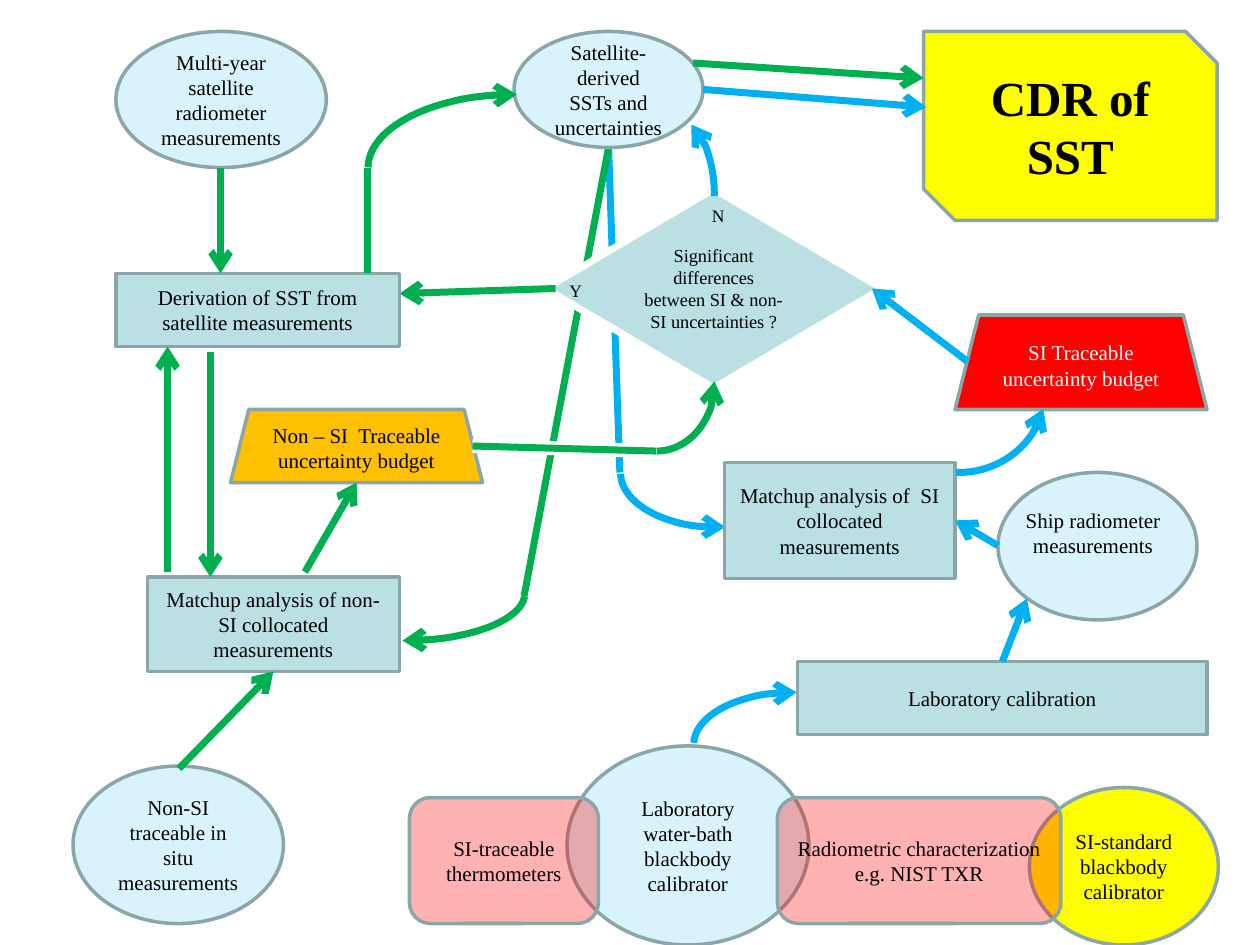
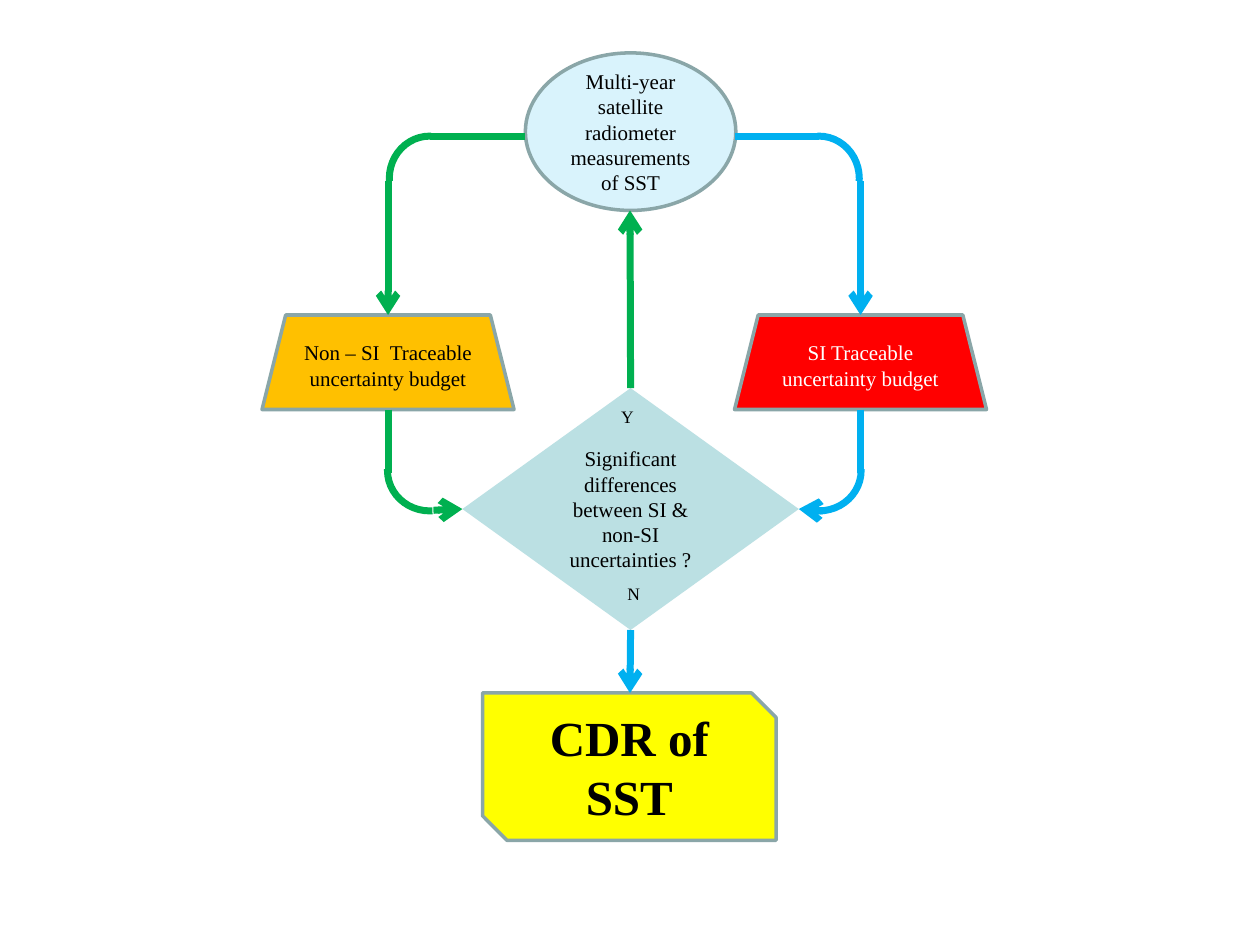
from typing import NamedTuple

from lxml import etree
from pptx import Presentation
from pptx.dml.color import RGBColor
from pptx.enum.shapes import MSO_CONNECTOR, MSO_SHAPE
from pptx.enum.text import MSO_ANCHOR, PP_ALIGN
from pptx.oxml.ns import qn
from pptx.util import Inches, Pt

ARC, DIAMOND, ELLIPSE = MSO_SHAPE.ARC, MSO_SHAPE.DIAMOND, MSO_SHAPE.OVAL
RECT, ROUNDED = MSO_SHAPE.RECTANGLE, MSO_SHAPE.ROUNDED_RECTANGLE
SNIPPED, TRAPEZOID = MSO_SHAPE.SNIP_2_DIAG_RECTANGLE, MSO_SHAPE.TRAPEZOID
STRAIGHT = MSO_CONNECTOR.STRAIGHT
CENTER, MIDDLE = PP_ALIGN.CENTER, MSO_ANCHOR.MIDDLE
TOP, LEFT, BOTTOM, RIGHT = range(4)

FONT = "Times New Roman"
BLACK, WHITE, OUTLINE = "000000", "FFFFFF", "8AA6A8"
SI_BLUE, NON_SI_GREEN = "00B0F0", "00B050"
PROCESS, RESULT, SI_RED, NON_SI_AMBER = "BBE0E3", "FFFF00", "FF0000", "FFC000"

QUESTION = "Significant differences between SI & non-SI uncertainties ?"
SI_BUDGET = "SI Traceable uncertainty budget"
NON_SI_BUDGET = "Non – SI  Traceable uncertainty budget"
GOAL = "CDR of SST"


class Joint(NamedTuple):
    """A connection site on a shape."""
    shape: object
    site: int


def rgb(color):
    return RGBColor.from_string(color)


def write(frame, text, size, color=BLACK, bold=False):
    frame.text = text
    for paragraph in frame.paragraphs:
        paragraph.alignment = CENTER
        for run in paragraph.runs:
            run.font.name = FONT
            run.font.size = Pt(size)
            run.font.bold = bold
            run.font.color.rgb = rgb(color)


def set_line(line, color, width, head=None):
    """Style a line; head is headEnd, tailEnd or None."""
    line.color.rgb = rgb(color)
    line.width = Pt(width)
    if head:
        etree.SubElement(line._get_or_add_ln(), qn("a:" + head), type="arrow")


class Region:
    """Draws parts at inches measured from the region's corner."""

    def __init__(self, slide, left, top):
        self.shapes = slide.shapes
        self.left, self.top = left, top

    def place(self, x, y):
        return Inches(self.left + x), Inches(self.top + y)

    def add(self, kind, box, alpha=None, fill=None):
        x, y, width, height = box
        shape = self.shapes.add_shape(kind, *self.place(x, y), Inches(width), Inches(height))
        shape.shadow.inherit = False
        if fill is None:
            shape.fill.background()
            return shape
        shape.fill.solid()
        shape.fill.fore_color.rgb = rgb(fill)
        if alpha is not None:
            color = shape.fill._xPr.find(qn("a:solidFill"))[0]
            etree.SubElement(color, qn("a:alpha"), val=str(alpha * 1000))
        return shape

    def node(self, kind, box, text, fill, alpha=None, size=12, color=BLACK, bold=False,
             outline=OUTLINE, width=2):
        shape = self.add(kind, box, alpha, fill)
        if outline:
            set_line(shape.line, outline, width)
        else:
            shape.line.fill.background()
        shape.text_frame.word_wrap = True
        shape.text_frame.vertical_anchor = MIDDLE
        write(shape.text_frame, text, size, color, bold)
        return shape

    def data(self, box, text):
        return self.node(ELLIPSE, box, text, SI_BLUE, alpha=15)

    def process(self, box, text):
        return self.node(RECT, box, text, PROCESS)

    def si_budget(self, box):
        return self.node(TRAPEZOID, box, SI_BUDGET, SI_RED, color=WHITE)

    def non_si_budget(self, box):
        return self.node(TRAPEZOID, box, NON_SI_BUDGET, NON_SI_AMBER)

    def goal(self, box):
        return self.node(SNIPPED, box, GOAL, RESULT, size=28, bold=True)

    def label(self, x, y, text, size=10, width=0.3, height=0.27, wrap=False):
        box = self.shapes.add_textbox(*self.place(x, y), Inches(width), Inches(height))
        box.text_frame.word_wrap = wrap
        write(box.text_frame, text, size)

    def line(self, start, end, color, arrow=True, width=4):
        """Draw a straight line between points or joints."""
        points = [(0, 0) if isinstance(p, Joint) else self.place(*p) for p in (start, end)]
        connector = self.shapes.add_connector(STRAIGHT, *points[0], *points[1])
        if isinstance(start, Joint):
            connector.begin_connect(start.shape, start.site)
        if isinstance(end, Joint):
            connector.end_connect(end.shape, end.site)
        set_line(connector.line, color, width, "tailEnd" if arrow else None)
        etree.SubElement(connector._element.spPr, qn("a:effectLst"))

    def arc(self, box, color, rotation, flip, start, end, arrow=True):
        """Draw an arc; start and end are degrees, flip holds h and/or v."""
        shape = self.add(ARC, box)
        for index, angle in enumerate((start, end)):
            shape.adjustments[index] = angle * 0.6
        shape.rotation = rotation
        for axis in flip:
            shape._element.spPr.xfrm.set("flip" + axis.upper(), "1")
        set_line(shape.line, color, 4, "headEnd" if arrow else None)


def satellite_and_decision(slide, left, top):
    area = Region(slide, left, top)
    below_satellite = (0.75, 0.92)
    area.line(below_satellite, (0.84, 3.5), SI_BLUE, arrow=False)
    area.arc((1.17, 2.76, 0.85, 1.5), SI_BLUE, 270.8, "hv", 348.3, 89.1)
    area.line(below_satellite, (0.08, 4.48), NON_SI_GREEN, arrow=False)
    area.arc((-1.25, 3.5, 0.75, 1.92), NON_SI_GREEN, 270, "h", 358.4, 88.7)
    area.node(DIAMOND, (0.25, 1.25, 2.67, 1.58), QUESTION, PROCESS, size=10.5,
              outline=WHITE, width=4)
    area.data((0, 0, 1.5, 0.92), "Satellite-derived SSTs and uncertainties")
    area.goal((3.25, 0, 2.33, 1.5))
    area.label(0.34, 1.92, "Y")
    area.label(1.47, 1.33, "N")
    area.line((1.5, 0.46), (3.27, 0.6), SI_BLUE)
    area.line((1.42, 0.25), (3.25, 0.37), NON_SI_GREEN)
    area.arc((0.63, 0.96, 1.25, 0.67), SI_BLUE, 90, "hv", 15.3, 91.9)
    area.line((0.33, 2.04), (-0.91, 2.08), NON_SI_GREEN)


def non_si_chain(slide, left, top):
    area = Region(slide, left, top)
    area.data((0.34, 0, 1.67, 1.08), "Multi-year satellite radiometer measurements")
    area.process((0.34, 1.92, 2.25, 0.58), "Derivation of SST from satellite measurements")
    budget = area.non_si_budget((1.25, 3, 2, 0.58))
    matchup = area.process((0.59, 4.33, 2, 0.75),
                           "Matchup analysis of non-SI collocated measurements")
    area.data((0, 5.83, 1.67, 1.25), "Non-SI traceable in situ measurements")

    area.line((1.17, 1.08), (1.17, 1.92), NON_SI_GREEN)
    area.line((0.75, 4.29), (0.75, 2.5), NON_SI_GREEN)
    area.line((1.09, 2.54), (1.09, 4.33), NON_SI_GREEN)
    area.line((0.84, 5.85), Joint(matchup, BOTTOM), NON_SI_GREEN)
    area.line((1.84, 4.29), Joint(budget, BOTTOM), NON_SI_GREEN)
    area.line((2.34, 1.92), (2.34, 1.08), NON_SI_GREEN, arrow=False)
    area.arc((2.92, -0.08, 1.17, 2.33), NON_SI_GREEN, 270, "v", 358.4, 89.7)
    area.arc((4.17, 2.25, 0.92, 1.08), NON_SI_GREEN, 180, "hv", 358.4, 89.7)
    for color, width in ((WHITE, 8), (NON_SI_GREEN, 4)):
        area.line((3.17, 3.29), (4.63, 3.33), color, arrow=False, width=width)


def si_chain(slide, left, top):
    area = Region(slide, left, top)
    area.si_budget((1.83, 0, 2, 0.75))
    matchup = area.process((0, 1.17, 1.83, 0.92),
                           "Matchup analysis of  SI collocated measurements")
    area.data((2.17, 1.25, 1.58, 1.17), "")
    area.label(2.29, 1.48, "Ship radiometer measurements", 12, 1.27, 0.7, wrap=True)
    calibration = area.process((0.58, 2.75, 3.25, 0.58), "Laboratory calibration")

    area.line(Joint(calibration, TOP), (2.4, 2.25), SI_BLUE)
    area.line((2.17, 1.83), Joint(matchup, RIGHT), SI_BLUE)
    area.arc((1.17, -0.08, 1.38, 1.33), SI_BLUE, 180, "hv", 13.5, 91.9)
    area.line((1.93, 0.37), (1.17, -0.21), SI_BLUE)


def laboratory(slide, left, top):
    area = Region(slide, left, top)
    area.data((1.25, 0, 1.92, 1.58), "Laboratory\nwater-bath blackbody calibrator")
    area.node(ROUNDED, (0, 0.41, 1.5, 1), "SI-traceable thermometers", SI_RED, alpha=30)
    area.node(ELLIPSE, (4.92, 0.33, 1.5, 1.25), "SI-standard blackbody calibrator", RESULT)
    area.node(ROUNDED, (2.92, 0.41, 2.25, 1),
              "Radiometric characterization\ne.g. NIST TXR", SI_RED, alpha=30)
    area.arc((2.63, -0.8, 0.83, 1.58), SI_BLUE, 270, "v", 356.1, 89)


def budget_branch(area, budget, decision, center, side, color):
    """Link measurements to a budget and on to the decision; side is 1 left, -1 right."""
    def across(distance):
        return center + side * distance

    def bend(y, rotation, flip):
        x = min(across(0.01), across(0.65))
        area.arc((x, y, 0.64, 0.67), color, rotation, flip if side < 0 else "",
                 356.1, 92, arrow=False)

    measurements_edge = 1.09 if side > 0 else 1
    area.line((across(measurements_edge), 0.66), (across(0.33), 0.66), color, arrow=False)
    bend(0.66, 180, "h")
    area.line((center, 1.02), Joint(budget, TOP), color)
    area.line(Joint(budget, BOTTOM), (center, 3.33), color, arrow=False)
    bend(2.98, 90, "v")
    area.line((across(0.36), 3.63), Joint(decision, LEFT if side > 0 else RIGHT), color)


def summary_flow(slide, left, top):
    area = Region(slide, left, top)
    decision = area.node(DIAMOND, (1.59, 2.66, 2.67, 1.92), QUESTION, PROCESS, outline=None)
    area.goal((1.75, 5.08, 2.33, 1.17))
    si = area.si_budget((3.75, 2.08, 2, 0.75))
    non_si = area.non_si_budget((0, 2.08, 2, 0.75))
    area.data((2.09, 0, 1.67, 1.25), "Multi-year satellite radiometer measurements of SST")
    area.label(2.75, 2.75, "Y")
    area.label(2.8, 4.16, "N")
    area.line(Joint(decision, BOTTOM), (2.92, 5.08), SI_BLUE)
    area.line(Joint(decision, TOP), (2.92, 1.25), NON_SI_GREEN)
    budget_branch(area, non_si, decision, 1, 1, NON_SI_GREEN)
    budget_branch(area, si, decision, 4.75, -1, SI_BLUE)


def main():
    deck = Presentation()
    deck.slide_width, deck.slide_height = Inches(10), Inches(7.5)
    blank = deck.slide_layouts[6]

    full_process = deck.slides.add_slide(blank)
    satellite_and_decision(full_process, 4.08, 0.25)
    laboratory(full_process, 3.25, 5.92)
    si_chain(full_process, 5.75, 2.5)
    non_si_chain(full_process, 0.58, 0.25)

    summary_flow(deck.slides.add_slide(blank), 2.08, 0.42)
    deck.save("out.pptx")


if __name__ == "__main__":
    main()
